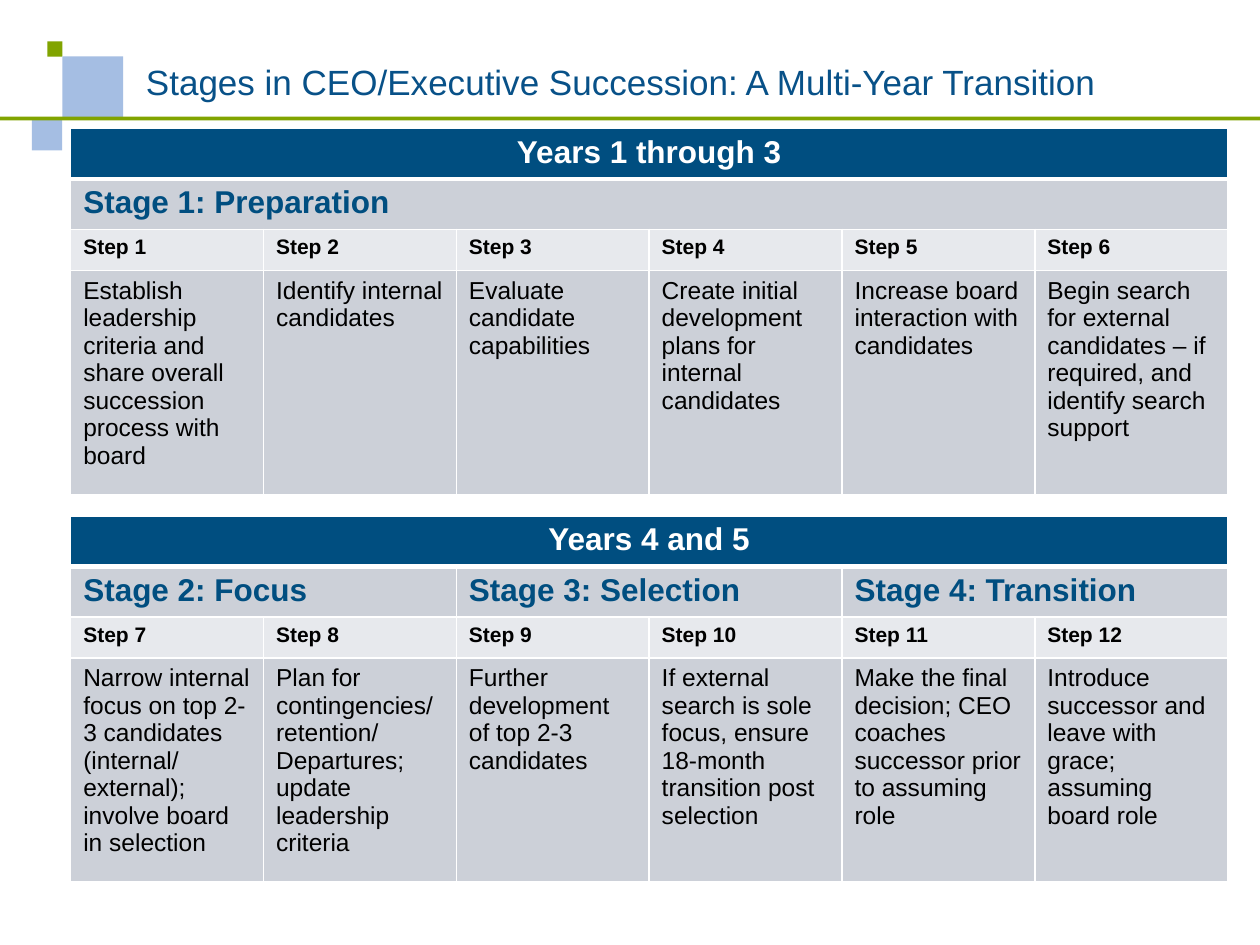
from lxml.etree import SubElement
from pptx import Presentation
from pptx.dml.color import RGBColor
from pptx.enum.shapes import MSO_SHAPE
from pptx.enum.text import MSO_ANCHOR, PP_ALIGN
from pptx.oxml.ns import qn
from pptx.util import Pt

COLORS = {
    "green": "81A400", "light blue": "A5BEE3", "title": "085188", "navy": "004E80",
    "gray": "CCD0D8", "pale gray": "E7E9ED", "white": "FFFFFF", "black": "000000",
}
FONT = "Arial"
TITLE = "Stages in CEO/Executive Succession: A Multi-Year Transition"

# color, left, top, width, height
DECORATIONS = [
    ("green", 27, 23.6, 8.7, 8.7),
    ("light blue", 35.7, 32.3, 34.7, 34.7),
    ("light blue", 18.2, 68.6, 17.4, 17.4),
    ("green", 0, 66.7, 720, 2.2),
]

PERIODS = [
    {
        "top": 73.4,
        "years": "Years 1 through 3",
        "stages": ["Stage 1: Preparation"],
        "first step": 1,
        "steps": [
            "Establish leadership criteria and share overall succession process with board",
            "Identify internal candidates",
            "Evaluate candidate capabilities",
            "Create initial development plans for internal candidates",
            "Increase board interaction with candidates",
            "Begin search for external candidates – if required, and\nidentify search support",
        ],
    },
    {
        "top": 294.8,
        "years": "Years 4 and 5",
        "stages": ["Stage 2: Focus", "Stage 3: Selection", "Stage 4: Transition"],
        "first step": 7,
        "steps": [
            "Narrow internal focus on top 2-3 candidates (internal/\n"
            "external); involve board in selection",
            "Plan for contingencies/\nretention/\nDepartures; update leadership criteria",
            "Further development of top 2-3 candidates",
            "If external search is sole focus, ensure 18-month transition post selection",
            "Make the final decision; CEO coaches successor prior to assuming role",
            "Introduce successor and leave with grace; assuming board role",
        ],
    },
]
TABLE_LEFT, COLUMN_WIDTH, COLUMN_COUNT = 40.4, 110.2, 6
ROW_HEIGHTS = [28, 28, 23.5, 128]
# fill, text color, size, bold, alignment
ROW_STYLES = [
    ("navy", "white", 18, True, PP_ALIGN.CENTER),
    ("gray", "navy", 18, True, PP_ALIGN.LEFT),
    ("pale gray", "black", 12, True, PP_ALIGN.LEFT),
    ("gray", "black", 14, False, PP_ALIGN.LEFT),
]


def color(name):
    return RGBColor.from_string(COLORS[name])


def set_font(paragraph, size, color_name, bold=False):
    font = paragraph.font
    font.name, font.size, font.bold = FONT, Pt(size), bold
    font.color.rgb = color(color_name)


def add_borders(cell, row):
    """White borders, thicker between the heading row and the stage row."""
    widths = {"L": 1, "R": 1, "T": 3 if row == 1 else 1, "B": 3 if row == 0 else 1}
    properties = cell._tc.get_or_add_tcPr()
    for side, width in widths.items():
        line = SubElement(properties, qn(f"a:ln{side}"), w=str(Pt(width)))
        fill = SubElement(line, qn("a:solidFill"))
        SubElement(fill, qn("a:srgbClr"), val=COLORS["white"])


def add_period(slide, period):
    step_names = [f"Step {period['first step'] + i}" for i in range(COLUMN_COUNT)]
    rows = [[period["years"]], period["stages"], step_names, period["steps"]]
    table = slide.shapes.add_table(
        len(rows), COLUMN_COUNT, Pt(TABLE_LEFT), Pt(period["top"]),
        Pt(COLUMN_WIDTH * COLUMN_COUNT), Pt(sum(ROW_HEIGHTS))).table
    for column in table.columns:
        column.width = Pt(COLUMN_WIDTH)

    for row, (texts, style) in enumerate(zip(rows, ROW_STYLES)):
        fill, text_color, size, bold, alignment = style
        table.rows[row].height = Pt(ROW_HEIGHTS[row])
        for column in range(COLUMN_COUNT):
            cell = table.cell(row, column)
            add_borders(cell, row)
            cell.fill.solid()
            cell.fill.fore_color.rgb = color(fill)
        span = COLUMN_COUNT // len(texts)
        for index, text in enumerate(texts):
            cell = table.cell(row, index * span)
            if span > 1:
                cell.merge(table.cell(row, (index + 1) * span - 1))
            if row == len(rows) - 1:
                cell.margin_bottom = 0
            cell.text = text
            for paragraph in cell.text_frame.paragraphs:
                paragraph.alignment = alignment
                set_font(paragraph, size, text_color, bold)


presentation = Presentation()
presentation.slide_width, presentation.slide_height = Pt(720), Pt(540)
slide = presentation.slides.add_slide(presentation.slide_layouts[6])

for color_name, *box in DECORATIONS:
    shape = slide.shapes.add_shape(MSO_SHAPE.RECTANGLE, *map(Pt, box))
    shape.shadow.inherit = False
    shape.fill.solid()
    shape.fill.fore_color.rgb = color(color_name)
    shape.line.fill.background()

title_frame = slide.shapes.add_textbox(Pt(76.3), Pt(2.9), Pt(569.5), Pt(59.8)).text_frame
title_frame.word_wrap = True
title_frame.vertical_anchor = MSO_ANCHOR.BOTTOM
title_frame.text = TITLE
title_frame.paragraphs[0].line_spacing = 0.9
set_font(title_frame.paragraphs[0], 20, "title")

for period in PERIODS:
    add_period(slide, period)

presentation.save("out.pptx")
